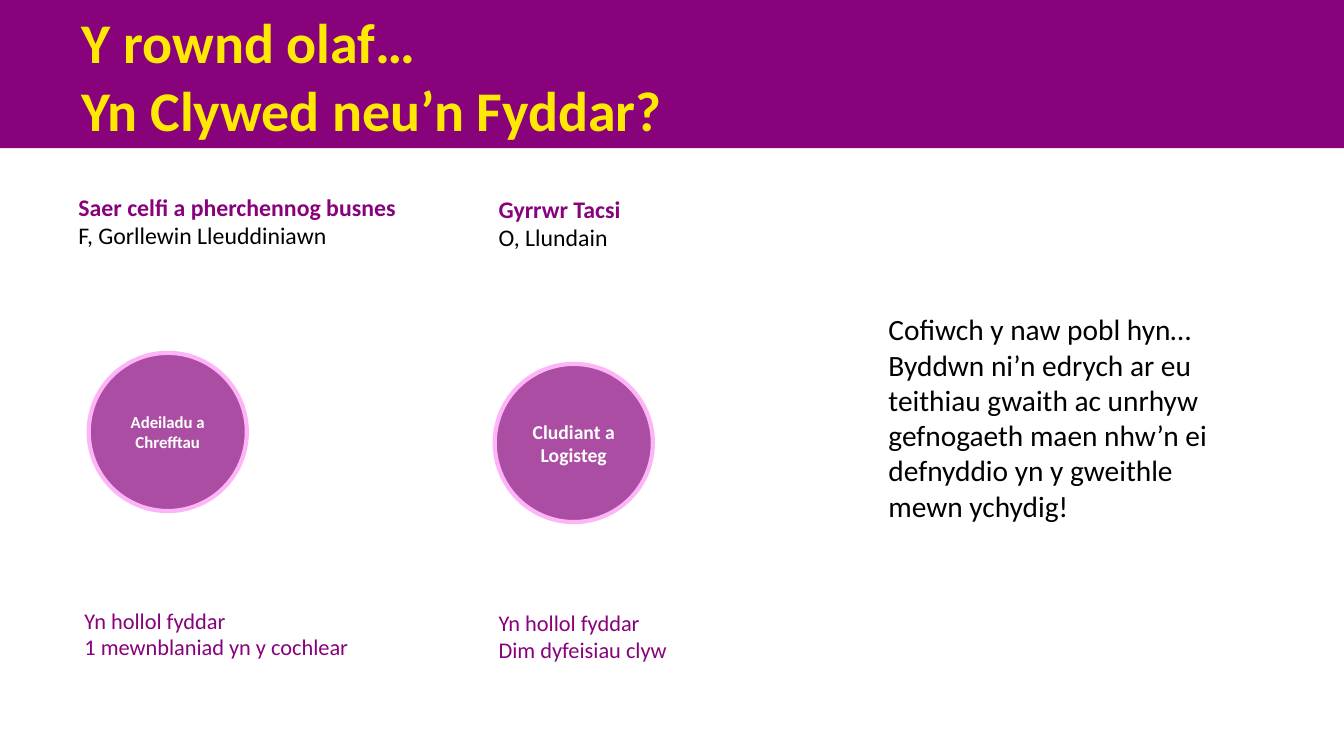
from pptx import Presentation
from pptx.dml.color import RGBColor
from pptx.enum.shapes import MSO_SHAPE
from pptx.enum.text import MSO_ANCHOR, PP_ALIGN
from pptx.util import Inches, Pt

RECTANGLE, OVAL = MSO_SHAPE.RECTANGLE, MSO_SHAPE.OVAL
TOP, MIDDLE = MSO_ANCHOR.TOP, MSO_ANCHOR.MIDDLE
LEFT, CENTER = PP_ALIGN.LEFT, PP_ALIGN.CENTER
PURPLE = RGBColor(0x87, 0x02, 0x7B)
ORCHID = RGBColor(0xAB, 0x4E, 0xA3)
PINK = RGBColor(0xFE, 0xB5, 0xF7)
YELLOW = RGBColor(0xFF, 0xE9, 0x00)
WHITE = RGBColor(0xFF, 0xFF, 0xFF)
BLACK = RGBColor(0x00, 0x00, 0x00)
NARROW, WIDE, NONE = (0.1, 0.05), (0.13, 0.07), (0, 0)

presentation = Presentation()
presentation.slide_width = Inches(13.34)
presentation.slide_height = Inches(7.5)
slide = presentation.slides.add_slide(presentation.slide_layouts[6])


def area(left, top, width, height):
    across, down = presentation.slide_width / 100, presentation.slide_height / 100
    return [int(left * across), int(top * down), int(width * across), int(height * down)]


def write(shape, lines, margins, anchor=TOP, alignment=LEFT):
    frame = shape.text_frame
    side, edge = Inches(margins[0]), Inches(margins[1])
    frame_format = {"word_wrap": True, "vertical_anchor": anchor,
                    "margin_left": side, "margin_right": side,
                    "margin_top": edge, "margin_bottom": edge}
    for name, value in frame_format.items():
        setattr(frame, name, value)
    for index, (text, size, color, bold) in enumerate(lines):
        paragraph = frame.add_paragraph() if index else frame.paragraphs[0]
        paragraph.text = text
        paragraph.alignment = alignment
        for run in paragraph.runs:
            for name, value in {"name": "Calibri", "size": Pt(size), "bold": bold}.items():
                setattr(run.font, name, value)
            run.font.color.rgb = color


band = slide.shapes.add_shape(RECTANGLE, *area(0, 0, 100, 19.6))
band.shadow.inherit = False
band.fill.solid()
band.fill.fore_color.rgb = PURPLE
band.line.fill.background()

title = slide.shapes.add_textbox(*area(5.1, 4.67, 72.79, 10.53))
write(title, [("Y rownd olaf…\vYn Clywed neu’n Fyddar?", 40, YELLOW, True)], WIDE, MIDDLE)

people = [
    {"job": "Saer celfi a pherchennog busnes", "place": "F, Gorllewin Lleuddiniawn",
     "sector": "Adeiladu a Chrefftau", "sector_size": 12,
     "device": "1 mewnblaniad yn y cochlear", "margins": NARROW,
     "job_left": 5.1, "circle_at": (6.6, 46.67), "hearing_left": 5.55},
    {"job": "Gyrrwr Tacsi", "place": "O, Llundain",
     "sector": "Cludiant a Logisteg", "sector_size": 14,
     "device": "Dim dyfeisiau clyw", "margins": WIDE,
     "job_left": 36.13, "circle_at": (36.81, 48.13), "hearing_left": 36.13},
]
for person in people:
    job = slide.shapes.add_textbox(*area(person["job_left"], 24.8, 30, 11))
    write(job, [(person["job"], 17, PURPLE, True), (person["place"], 17, BLACK, False)],
          person["margins"])

    circle = slide.shapes.add_shape(OVAL, *area(*person["circle_at"], 11.77, 20.93))
    circle.shadow.inherit = False
    circle.fill.solid()
    circle.fill.fore_color.rgb = ORCHID
    circle.line.color.rgb = PINK
    circle.line.width = Pt(3)
    write(circle, [(person["sector"], person["sector_size"], WHITE, True)], NONE, MIDDLE, CENTER)

    hearing = slide.shapes.add_textbox(*area(person["hearing_left"], 79.6, 22, 10))
    write(hearing, [(text, 16, PURPLE, False) for text in ("Yn hollol fyddar", person["device"])],
          person["margins"])

reminder = slide.shapes.add_textbox(*area(65.37, 40.53, 28.86, 29.6))
write(reminder, [("Cofiwch y naw pobl hyn… Byddwn ni’n edrych ar eu teithiau gwaith ac unrhyw "
                  "gefnogaeth maen nhw’n ei defnyddio yn y gweithle \vmewn ychydig!",
                  21, BLACK, False)], NARROW)

presentation.save("out.pptx")
